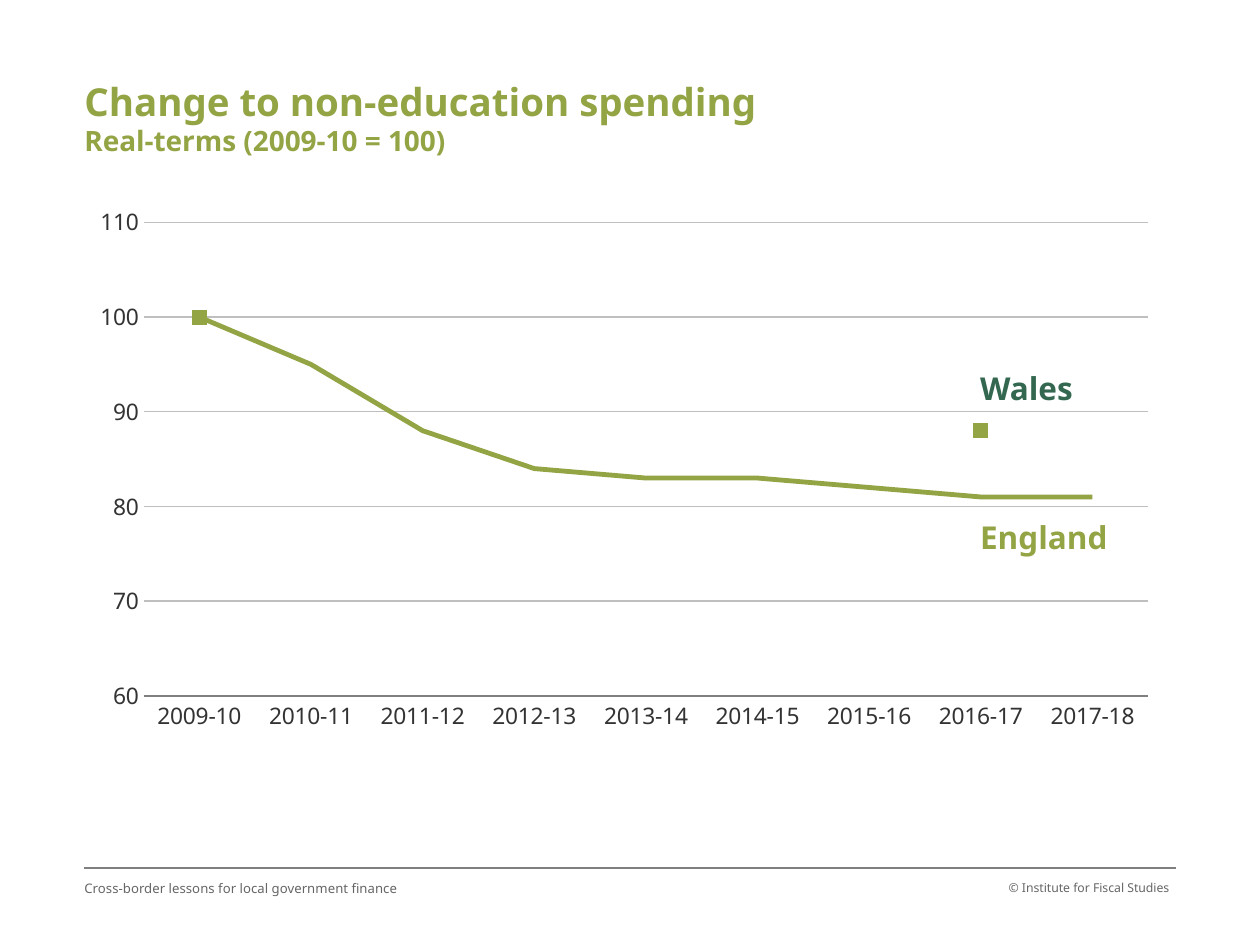
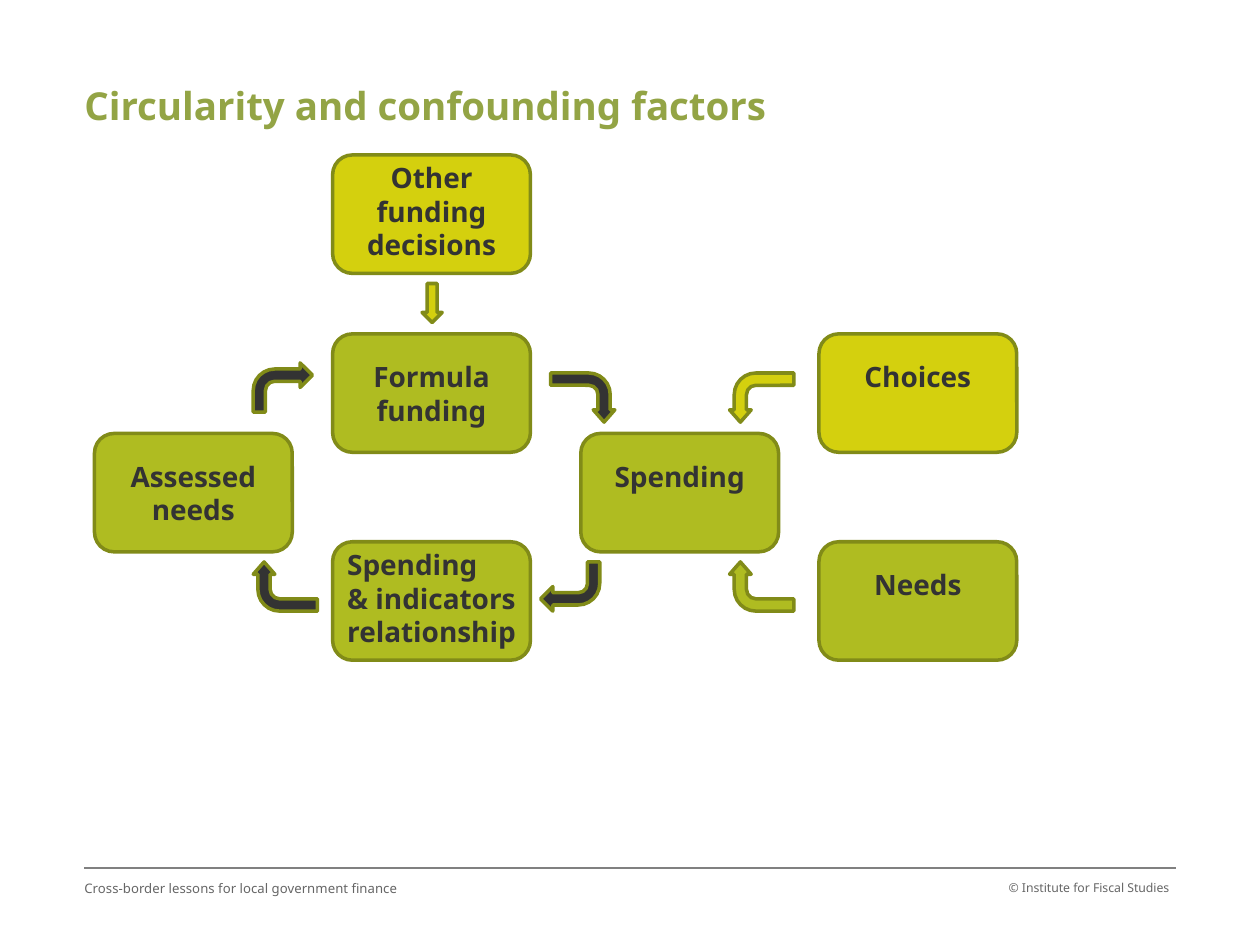
from lxml import etree
from pptx import Presentation
from pptx.chart.data import CategoryChartData
from pptx.dml.color import RGBColor
from pptx.enum.chart import XL_CHART_TYPE, XL_MARKER_STYLE, XL_TICK_MARK
from pptx.enum.shapes import MSO_CONNECTOR, MSO_SHAPE
from pptx.enum.text import MSO_ANCHOR, PP_ALIGN
from pptx.oxml.ns import qn
from pptx.util import Inches, Pt

LINE_CHART = XL_CHART_TYPE.LINE_MARKERS
SQUARE, NO_MARK = XL_MARKER_STYLE.SQUARE, XL_MARKER_STYLE.NONE
NO_TICK = XL_TICK_MARK.NONE
STRAIGHT = MSO_CONNECTOR.STRAIGHT
ROUND, BENT, DOWN = (MSO_SHAPE.ROUNDED_RECTANGLE, MSO_SHAPE.BENT_ARROW,
                     MSO_SHAPE.DOWN_ARROW)
TOP = MSO_ANCHOR.TOP
LEFT, MID, RIGHT = PP_ALIGN.LEFT, PP_ALIGN.CENTER, PP_ALIGN.RIGHT

# Shared style
FONT = "Noto Sans"
OLIVE, PINE, INK, GREY = "93A445", "336750", "333333", "666666"
RULE, GRID = "808080", "BFBFBF"
GREEN, YELLOW, EDGE = "AFBC21", "D4D00E", "818B18"
MARGIN, WIDE = 0.67, 10

# Shared footer
TOPIC = "Cross-border lessons for local government finance"
RIGHTS = "© Institute for Fiscal Studies"

# Spending chart
YEARS = [f"{y}-{y % 100 + 1}" for y in range(2009, 2018)]
ENGLAND = [100, 95, 88, 84, 83, 83, 82, 81, 81]
WALES = [100] + [None] * 6 + [88, None]
PLOT = {"x": 0.079, "y": 0.048, "w": 0.888, "h": 0.837}
LABELS = [("England", 4.06, OLIVE), ("Wales", 2.88, PINE)]

# Flow diagram: text, column, row, fill, inset above the text
BOX_W, BOX_H = 1.57, 0.94
COLS = [0.75, 2.64, 4.61, 6.5]
ROWS = [1.23, 2.65, 3.44, 4.3]
BOXES = [
    ("Other funding decisions", 1, 0, YELLOW, 0),
    ("Formula funding", 1, 1, GREEN, 0.16),
    ("Choices", 3, 1, YELLOW, 0.16),
    ("Assessed needs", 0, 2, GREEN, 0.16),
    ("Spending", 2, 2, GREEN, 0.16),
    ("Spending\v& indicators\vrelationship", 1, 3, GREEN, 0),
    ("Needs", 3, 3, GREEN, 0.16),
]

# Arrows: left, top, turn, fill, flipped
WIDE_BENDS = [(2.01, 2.88, 0, INK, False), (4.29, 4.46, 180, INK, False)]
TALL_BENDS = [
    (4.43, 2.9, 90, INK, False),
    (2.07, 4.4, 270, INK, False),
    (5.85, 4.4, 270, GREEN, False),
    (5.85, 2.9, 90, YELLOW, True),
]
TALL_ADJ = [0.25, 0.22, 0.25, 0.44]


def rgb(code):
    return RGBColor.from_string(code)


def style(font, size, color, bold=False):
    font.name, font.size, font.bold = FONT, Pt(size), bold
    font.color.rgb = rgb(color)


def stroke(line, color, width):
    line.color.rgb = rgb(color)
    line.width = Pt(width)


def fill_text(shape, text, size, color, bold, align, insets):
    frame = shape.text_frame
    frame.word_wrap, frame.vertical_anchor = True, TOP
    (frame.margin_left, frame.margin_top,
     frame.margin_right, frame.margin_bottom) = map(Inches, insets)
    frame.text = text
    para = frame.paragraphs[0]
    para.alignment = align
    for run in para.runs:
        style(run.font, size, color, bold)
    return para


def add_text(slide, at, text, size, color, bold=False, align=LEFT,
             insets=(0, 0, 0, 0)):
    box = slide.shapes.add_textbox(*map(Inches, at))
    return fill_text(box, text, size, color, bold, align, insets)


def add_form(slide, kind, at, fill):
    form = slide.shapes.add_shape(kind, *map(Inches, at))
    form.shadow.inherit = False
    form.fill.solid()
    form.fill.fore_color.rgb = rgb(fill)
    stroke(form.line, EDGE, 2)
    return form


def add_page(deck, title, top, sub=None):
    slide = deck.slides.add_slide(deck.slide_layouts[6])
    # Rule and footer
    rule = slide.shapes.add_connector(STRAIGHT, Inches(MARGIN), Inches(6.89),
                                      Inches(WIDE - MARGIN), Inches(6.89))
    stroke(rule.line, RULE, 0.75)
    etree.SubElement(rule._element.spPr, qn("a:effectLst"))
    add_text(slide, (MARGIN, 6.99, 3.17, 0.4), TOPIC, 7.5, GREY)
    add_text(slide, (7.6, 6.99, 1.73, 0.4), RIGHTS, 7, GREY, align=RIGHT,
             insets=(0, 0, 0.05, 0))
    # Title with an optional second line
    text = f"{title}\v{sub}" if sub else title
    para = add_text(slide, (MARGIN, top, 7.16, 0.44), text, 22, OLIVE, True)
    para.line_spacing = 0.95
    if sub:
        para.runs[1].font.size = Pt(16)
    return slide


def place_plot(chart):
    area = chart._chartSpace.chart.plotArea
    for old in area.findall(qn("c:layout")):
        area.remove(old)
    layout = etree.Element(qn("c:layout"))
    area.insert(0, layout)
    manual = etree.SubElement(layout, qn("c:manualLayout"))
    parts = [("layoutTarget", "inner"), ("xMode", "edge"), ("yMode", "edge")]
    for tag, value in parts + list(PLOT.items()):
        etree.SubElement(manual, qn(f"c:{tag}")).set("val", str(value))


def add_lines(slide):
    data = CategoryChartData(number_format="0")
    data.categories = YEARS
    data.add_series("England", ENGLAND)
    data.add_series("Wales", WALES)
    at = map(Inches, (0.43, 1.55, 8.98, 4.49))
    chart = slide.shapes.add_chart(LINE_CHART, *at, data).chart
    chart.has_legend = chart.has_title = False
    style(chart.font, 13, INK)
    place_plot(chart)
    # Axes
    years, scale = chart.category_axis, chart.value_axis
    years.major_tick_mark = scale.major_tick_mark = NO_TICK
    stroke(years.format.line, RULE, 1)
    scale.minimum_scale, scale.maximum_scale, scale.major_unit = 60, 110, 10
    scale.tick_labels.number_format = "0"
    scale.tick_labels.number_format_is_linked = False
    scale.format.line.fill.background()
    stroke(scale.major_gridlines.format.line, GRID, 0.75)
    # Series: a line for England, single points for Wales
    plot = chart.plots[0]
    plot.vary_by_categories = False
    england, wales = plot.series
    england.smooth = wales.smooth = False
    stroke(england.format.line, OLIVE, 2.75)
    england.marker.style = NO_MARK
    wales.format.line.fill.background()
    wales.marker.style, wales.marker.size = SQUARE, 8
    wales.marker.format.fill.solid()
    wales.marker.format.fill.fore_color.rgb = rgb(OLIVE)
    wales.marker.format.line.fill.background()


def add_bend(slide, size, arrow, adj=()):
    left, top, turn, fill, flip = arrow
    bend = add_form(slide, BENT, (left, top, *size), fill)
    bend.rotation = turn
    for i, value in enumerate(adj):
        bend.adjustments[i] = value
    if flip:
        bend._element.spPr.find(qn("a:xfrm")).set("flipV", "1")


def draw_chart(deck):
    slide = add_page(deck, "Change to non-education spending", 0.65,
                     "Real-terms (2009-10 = 100)")
    add_lines(slide)
    for name, top, color in LABELS:
        add_text(slide, (7.68, top, 1.26, 0.4), name, 18, color, True,
                 insets=(0.1, 0.05, 0.1, 0.05))


def draw_flow(deck):
    slide = add_page(deck, "Circularity and confounding factors", 0.68)
    for text, col, row, fill, inset in BOXES:
        box = add_form(slide, ROUND, (COLS[col], ROWS[row], BOX_W, BOX_H),
                       fill)
        broken = "\v" in text
        sides = (0.07, 0) if broken else (0.13, 0.13)
        fill_text(box, text, 16, INK, True, LEFT if broken else MID,
                  (sides[0], inset, sides[1], 0))
    for arrow in WIDE_BENDS:
        add_bend(slide, (0.47, 0.39), arrow)
    for arrow in TALL_BENDS:
        add_bend(slide, (0.39, 0.51), arrow, TALL_ADJ)
    add_form(slide, DOWN, (3.35, 2.25, 0.16, 0.31), YELLOW)


def main():
    deck = Presentation()
    deck.slide_width, deck.slide_height = Inches(WIDE), Inches(7.5)
    draw_chart(deck)
    draw_flow(deck)
    deck.save("out.pptx")


if __name__ == "__main__":
    main()
